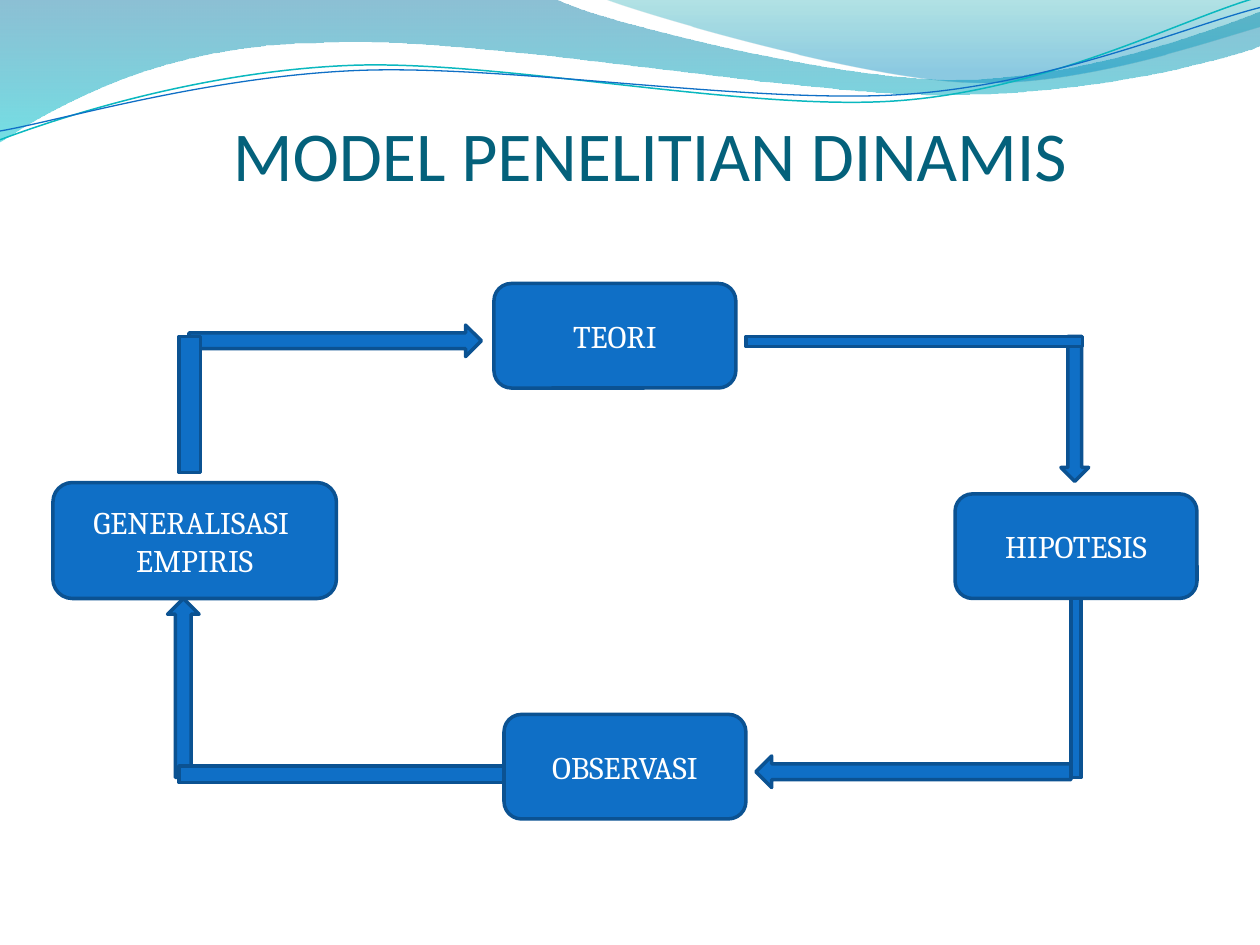
import pptx
import pptx.dml.color
import pptx.enum.shapes
import pptx.enum.text
import pptx.oxml
import pptx.oxml.ns
import pptx.util
from pptx.util import Inches

RGBColor = pptx.dml.color.RGBColor
SHAPE = pptx.enum.shapes.MSO_SHAPE
ANCHOR = pptx.enum.text.MSO_ANCHOR

WHITE = RGBColor(0xFF, 0xFF, 0xFF)
BLUE = RGBColor(0x0F, 0x6F, 0xC6)
DARK_BLUE = RGBColor(0x0B, 0x52, 0x92)
TITLE_TEAL = RGBColor(0x04, 0x61, 0x7B)
LINE_TEAL = RGBColor(0x0A, 0xB8, 0xBF)
WAVE_BLUE = RGBColor(0x00, 0x74, 0xA1)
WAVE_CYAN = RGBColor(0x00, 0xC6, 0xCF)
CREST_TEAL = RGBColor(0x00, 0xA1, 0xA9)
CREST_BLUE = RGBColor(0x00, 0x8B, 0xBF)

BROAD_WAVE = [
    (0, -0.01), (4.4, -0.01),
    (4.76, 0.17, 6.64, 0.63, 7.58, 0.63), (8.53, 0.63, 9.58, 0.26, 10, 0.09),
    (10.01, 0.36),
    (9.83, 0.44, 8.7, 0.76, 7.46, 0.75), (6.22, 0.75, 3.82, 0.28, 2.57, 0.34),
    (1.29, 0.35, 0.46, 0.83, -0.01, 1.13), (0, -0.01),
]
CREST = [
    (4.79, -0.01),
    (5.09, 0.11, 6.82, 0.62, 7.69, 0.65), (8.56, 0.69, 9.61, 0.32, 10, 0.21),
    (10, 0), (4.79, -0.01),
]
TEAL_LINE = [
    (0, 1.11),
    (0.48, 0.93, 1.58, 0.57, 2.77, 0.52), (3.95, 0.47, 5.93, 0.89, 7.13, 0.8),
    (8.33, 0.71, 9.38, 0.15, 9.98, -0.02),
]
BLUE_LINE = [
    (0, 1.04),
    (0.47, 0.96, 1.64, 0.61, 2.83, 0.56), (4.03, 0.51, 5.97, 0.83, 7.17, 0.75),
    (8.36, 0.67, 9.41, 0.21, 10, 0.06),
]

BOXES = [
    ("TEORI", 3.92, 2.25, 1.92, 0.83),
    ("OBSERVASI", 4, 5.67, 1.92, 0.83),
    ("GENERALISASI  EMPIRIS", 0.42, 3.83, 2.25, 0.92),
    ("HIPOTESIS", 7.58, 3.92, 1.92, 0.83),
]
ARROW_PARTS = [
    (SHAPE.RIGHT_ARROW, 1.5, 2.58, 2.32, 0.25),
    (SHAPE.DOWN_ARROW, 8.42, 2.67, 0.22, 1.15),
    (SHAPE.UP_ARROW, 1.33, 4.75, 0.25, 1.42),
    (SHAPE.LEFT_ARROW, 6, 6, 2.5, 0.25),
    (SHAPE.FLOWCHART_PROCESS, 5.92, 2.67, 2.67, 0.08),
    (SHAPE.FLOWCHART_PROCESS, 1.42, 6.08, 2.58, 0.13),
    (SHAPE.FLOWCHART_PROCESS, 8.5, 4.75, 0.08, 1.42),
    (SHAPE.FLOWCHART_PROCESS, 1.42, 2.67, 0.17, 1.08),
]


def make_element(name, attributes=""):
    """Return a new empty drawing element."""
    return pptx.oxml.parse_xml(
        f'<a:{name} {pptx.oxml.ns.nsdecls("a")} {attributes}/>')


def add_outline(slide, segments, close):
    """Add a freeform of lines (two numbers) and cubic curves (six numbers)."""
    points = [
        (Inches(segment[index]), Inches(segment[index + 1]))
        for segment in segments for index in range(0, len(segment), 2)]
    builder = slide.shapes.build_freeform(*points[0], scale=1.0)
    builder.add_line_segments(points[1:], close=close)
    shape = builder.convert_to_shape()
    shape.shadow.inherit = False
    lines = iter(list(shape._element.spPr.iter(pptx.oxml.ns.qn("a:lnTo"))))
    for segment in segments[1:]:
        group = [next(lines) for _ in range(len(segment) // 2)]
        if len(group) == 3:
            curve = make_element("cubicBezTo")
            group[0].addprevious(curve)
            for line in group:
                curve.append(line[0])
                line.getparent().remove(line)
    return shape


def add_wave(slide, segments, stops):
    """Add a closed wave with a downward gradient of (position, colour, opacity) stops."""
    shape = add_outline(slide, segments, close=True)
    shape.line.fill.background()
    shape.fill.gradient()
    shape.fill.gradient_angle = 270
    for stop, (position, color, _) in zip(shape.fill.gradient_stops, stops):
        stop.position = position
        stop.color.rgb = color
    color_elements = shape._element.spPr.iter(pptx.oxml.ns.qn("a:srgbClr"))
    for element, (_, _, opacity) in zip(color_elements, stops):
        element.append(make_element("alpha", f'val="{opacity * 1000}"'))


def add_curve(slide, segments, color, width):
    """Add an open curved line."""
    shape = add_outline(slide, segments, close=False)
    shape.fill.background()
    shape.line.color.rgb = color
    shape.line.width = pptx.util.Pt(width)


def write_text(shape, text, size, font, color, anchor=ANCHOR.MIDDLE, lead_size=None):
    """Write centred text, after a leading space when lead_size is given."""
    frame = shape.text_frame
    frame.word_wrap = True
    frame.vertical_anchor = anchor
    paragraph = frame.paragraphs[0]
    paragraph.alignment = pptx.enum.text.PP_ALIGN.CENTER
    pieces = [(" ", lead_size)] if lead_size else []
    for content, points in pieces + [(text, size)]:
        run = paragraph.add_run()
        run.text = content
        run.font.size = pptx.util.Pt(points)
        run.font.name = font
        run.font.color.rgb = color


def add_block(slide, kind, left, top, width, height):
    """Add a blue preset shape with a dark blue border."""
    shape = slide.shapes.add_shape(
        kind, Inches(left), Inches(top), Inches(width), Inches(height))
    shape.shadow.inherit = False
    shape.fill.solid()
    shape.fill.fore_color.rgb = BLUE
    shape.line.color.rgb = DARK_BLUE
    shape.line.width = pptx.util.Pt(2)
    return shape


def add_title(slide, text):
    """Add the slide title."""
    shape = slide.shapes.add_textbox(Inches(0.58), Inches(0.33), Inches(9), Inches(1.25))
    frame = shape.text_frame
    frame.margin_left = frame.margin_right = frame.margin_bottom = 0
    write_text(shape, text, size=40, font="Calibri", color=TITLE_TEAL,
               anchor=ANCHOR.BOTTOM, lead_size=50)


def main():
    """Build the slide and save it."""
    presentation = pptx.Presentation()
    presentation.slide_width = Inches(10)
    presentation.slide_height = Inches(7.5)
    slide = presentation.slides.add_slide(presentation.slide_layouts[6])
    add_wave(slide, BROAD_WAVE, [(0, WAVE_BLUE, 45), (1, WAVE_CYAN, 55)])
    add_wave(slide, CREST, [(0, CREST_TEAL, 30), (0.8, CREST_BLUE, 45)])
    add_curve(slide, TEAL_LINE, LINE_TEAL, 0.85)
    add_curve(slide, BLUE_LINE, BLUE, 0.75)
    add_title(slide, "MODEL PENELITIAN DINAMIS")
    for text, *place in BOXES:
        box = add_block(slide, SHAPE.ROUNDED_RECTANGLE, *place)
        write_text(box, text, size=18, font="Cambria", color=WHITE)
    for kind, *place in ARROW_PARTS:
        add_block(slide, kind, *place)
    presentation.save("out.pptx")


if __name__ == "__main__":
    main()
